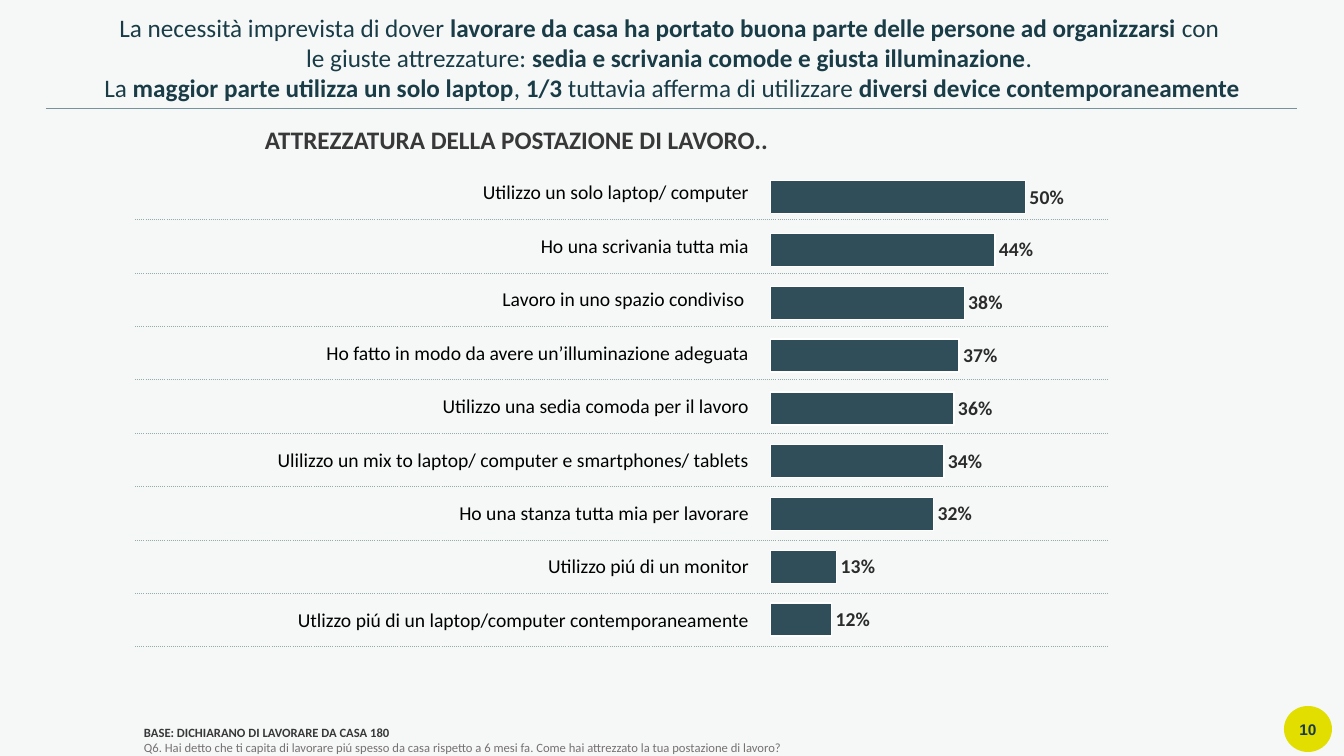
from lxml import etree
from pptx import Presentation
from pptx.chart.data import CategoryChartData
from pptx.dml.color import RGBColor
from pptx.enum.chart import XL_CHART_TYPE, XL_LABEL_POSITION
from pptx.enum.shapes import MSO_CONNECTOR, MSO_SHAPE
from pptx.enum.text import MSO_ANCHOR, PP_ALIGN
from pptx.oxml import parse_xml
from pptx.oxml.ns import nsdecls, qn
from pptx.util import Pt

BAR = XL_CHART_TYPE.BAR_CLUSTERED
OUTSIDE_END = XL_LABEL_POSITION.OUTSIDE_END
STRAIGHT = MSO_CONNECTOR.STRAIGHT
OVAL = MSO_SHAPE.OVAL
MIDDLE, BOTTOM = MSO_ANCHOR.MIDDLE, MSO_ANCHOR.BOTTOM
CENTER, RIGHT = PP_ALIGN.CENTER, PP_ALIGN.RIGHT
PX = 914400 / 100.8
NAVY, GREY = "1A3C47", "383839"


def px(*lengths):
    return [round(n * PX) for n in lengths]


def style(font, size, color, bold=False, name="Calibri"):
    font.name, font.size, font.bold = name, Pt(size), bold
    font.color.rgb = RGBColor.from_string(color)


prs = Presentation()
prs.slide_width, prs.slide_height = px(1344, 756)
slide = prs.slides.add_slide(prs.slide_layouts[6])
shapes = slide.shapes
slide.background.fill.solid()
slide.background.fill.fore_color.rgb = RGBColor.from_string("F6F8F8")

# Page number
page_badge = shapes.add_shape(OVAL, *px(1284, 706, 48, 46))
page_badge.shadow.inherit = False
page_badge.fill.solid()
page_badge.fill.fore_color.rgb = RGBColor.from_string("E2DE00")
page_badge.line.fill.background()
frame = page_badge.text_frame
frame.margin_left = frame.margin_right = frame.margin_top = frame.margin_bottom = 0
frame.vertical_anchor = MIDDLE
frame.text = "10"
frame.paragraphs[0].alignment = CENTER
style(frame.paragraphs[0].runs[0].font, 11, "193B47", True, "Arial")

# Rule under the headline
headline_rule = shapes.add_connector(STRAIGHT, *px(46, 108, 1297, 108))
headline_rule.line.color.rgb = RGBColor.from_string("76929C")
headline_rule.line.width = Pt(0.5)
etree.SubElement(headline_rule.element.spPr, qn("a:effectLst"))

# Base and question
frame = shapes.add_textbox(*px(144, 661, 1200, 94)).text_frame
frame.word_wrap = True
frame.margin_left = frame.margin_right = frame.margin_top = frame.margin_bottom = 0
frame.vertical_anchor = BOTTOM
frame.text = (
    "BASE: DICHIARANO DI LAVORARE DA CASA 180\n"
    "Q6. Hai detto che ti capita di lavorare piú spesso da casa rispetto a 6 mesi fa. "
    "Come hai attrezzato la tua postazione di lavoro?"
)
for note, color, bold in zip(frame.paragraphs, (GREY, "767171"), (True, False)):
    note.line_spacing = 0.95
    style(note.runs[0].font, 9, color, bold)

# Chart heading
frame = shapes.add_textbox(*px(244, 119, 545, 40)).text_frame
frame.word_wrap = True
frame.text = "ATTREZZATURA DELLA POSTAZIONE DI LAVORO.."
frame.paragraphs[0].alignment = CENTER
style(frame.paragraphs[0].runs[0].font, 18, GREY, True)

# Answers with their shares
answers = [
    ("Utilizzo un solo laptop/ computer", 0.50),
    ("Ho una scrivania tutta mia", 0.44),
    ("Lavoro in uno spazio condiviso ", 0.38),
    ("Ho fatto in modo da avere un’illuminazione adeguata", 0.37),
    ("Utilizzo una sedia comoda per il lavoro", 0.36),
    ("Ulilizzo un mix to laptop/ computer e smartphones/ tablets", 0.34),
    ("Ho una stanza tutta mia per lavorare", 0.32),
    ("Utilizzo piú di un monitor", 0.13),
    ("Utlizzo piú di un laptop/computer contemporaneamente", 0.12),
]

# Answer table with dotted rules
table = shapes.add_table(len(answers), 2, *px(135, 166, 974, 481)).table
table.first_row = table.horz_banding = False
NO_STYLE = "{2D5ABB26-0587-4C30-8999-92F81FD0307C}"
table._tbl.tblPr.find(qn("a:tableStyleId")).text = NO_STYLE
table.columns[0].width, table.columns[1].width = px(633, 341)
for row, (answer, share) in zip(table.rows, answers):
    for cell in row.cells:
        cell.fill.background()
        cell._tc.get_or_add_tcPr().insert(0, parse_xml(
            f'<a:lnB {nsdecls("a")} w="6350"><a:solidFill><a:srgbClr val="95ACAC"/>'
            '</a:solidFill><a:prstDash val="sysDot"/></a:lnB>'))
    label = row.cells[0]
    label.vertical_anchor = MIDDLE
    label.margin_left, label.margin_top, label.margin_right, label.margin_bottom = px(1, 1, 19, 0)
    label.text = answer
    label.text_frame.paragraphs[0].alignment = RIGHT
    style(label.text_frame.paragraphs[0].runs[0].font, 14, "000000")

# Bar chart
shares = CategoryChartData(number_format="0%")
shares.categories = [str(i) for i in range(1, len(answers) + 1)]
shares.add_series("Series 1", [share for answer, share in answers])
chart = shapes.add_chart(BAR, *px(751, 162, 358, 494), shares).chart
chart.has_legend = chart.has_title = False
style(chart.font, 9, "2B2B2B")
chart.category_axis.visible = chart.value_axis.visible = False
chart.category_axis.reverse_order = True
chart.value_axis.has_major_gridlines = False
chart.value_axis.minimum_scale, chart.value_axis.maximum_scale = 0, 0.5
plot = chart.plots[0]
plot.gap_width = 60
plot.vary_by_categories = False
bars = plot.series[0].format
bars.fill.solid()
bars.fill.fore_color.rgb = RGBColor.from_string("304E59")
bars.line.color.rgb = RGBColor.from_string("FFFFFF")
bars.line.width = Pt(1)
plot.has_data_labels = True
labels = plot.data_labels
labels.show_value = True
labels.position = OUTSIDE_END
labels.number_format, labels.number_format_is_linked = "0%", False
style(labels.font, 14, "2B2B2B", True)

# Fixed plot area, so that the bars meet the table rows
plot_area = chart.element.find(".//" + qn("c:plotArea"))
for layout in plot_area.findall(qn("c:layout")):
    plot_area.remove(layout)
plot_area.insert(0, parse_xml(
    f'<c:layout {nsdecls("c")}><c:manualLayout><c:layoutTarget val="inner"/>'
    '<c:xMode val="edge"/><c:yMode val="edge"/><c:x val="0.054"/><c:y val="0.018"/>'
    '<c:w val="0.713"/><c:h val="0.962"/></c:manualLayout></c:layout>'))

# Headline: (text, bold) runs by line
headline = [
    [("La necessità imprevista di dover ", False),
     ("lavorare da casa ha portato buona parte delle persone ad organizzarsi ", True),
     ("con ", False)],
    [("le giuste attrezzature: ", False),
     ("sedia e scrivania comode e giusta illuminazione", True),
     (". ", False)],
    [("La ", False),
     ("maggior parte utilizza un solo laptop", True),
     (", ", False),
     ("1/3", True),
     (" tuttavia afferma di utilizzare ", False),
     ("diversi device contemporaneamente", True)],
]
frame = shapes.add_textbox(*px(34, 7, 1276, 102)).text_frame
frame.word_wrap = True
for i, line in enumerate(headline):
    paragraph = frame.add_paragraph() if i else frame.paragraphs[0]
    paragraph.alignment = CENTER
    for text, bold in line:
        run = paragraph.add_run()
        run.text = text
        style(run.font, 18, NAVY, bold)

prs.save("out.pptx")
